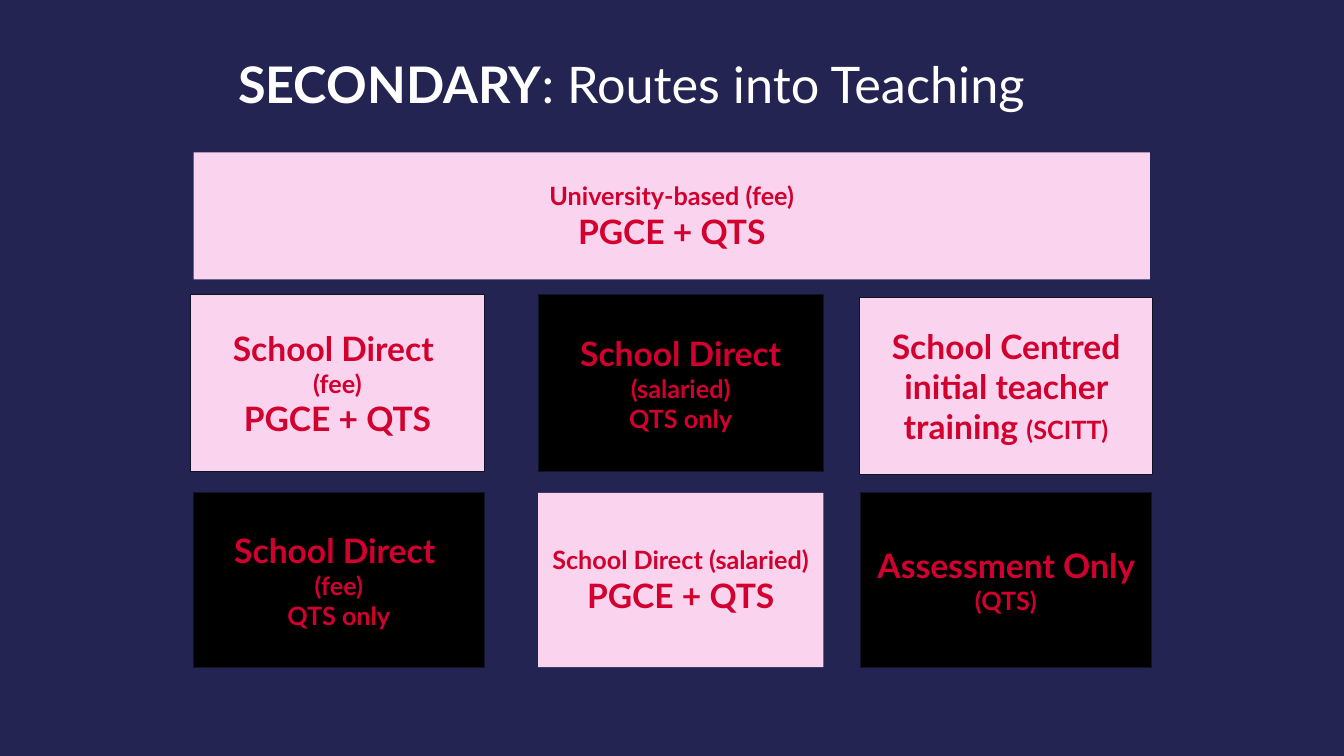
from pptx import Presentation
from pptx.dml.color import RGBColor
from pptx.enum.shapes import MSO_SHAPE
from pptx.enum.text import MSO_ANCHOR, PP_ALIGN
from pptx.util import Cm, Pt

COLORS = {"navy": "242452", "pink": "FAD4EE", "black": "000000",
          "edge": "111127", "red": "D2002E", "white": "FFFFFF"}
FONT = "Lato"
BIG, SMALL = 24, 18

TITLE = [("SECONDARY", True), (": Routes into Teaching", False)]
LEFT, MID, RIGHT = 4.88, 13.56, 21.69
TOP, UPPER, LOWER = 3.84, 7.42, 12.42

ROUTES = [
    ((LEFT, TOP, 24.1, 3.2), "pink", False,
     [[("University-based (fee)", SMALL)], [("PGCE + QTS", BIG)]]),
    ((LEFT - 0.07, UPPER, 7.39, 4.47), "pink", True,
     [[("School Direct ", BIG)], [("(fee)", SMALL)], [("PGCE + QTS", BIG)]]),
    ((MID, UPPER, 7.19, 4.47), "black", True,
     [[("School Direct ", BIG), ("(salaried)", SMALL)], [("QTS only", SMALL)]]),
    ((RIGHT - 0.03, UPPER + 0.07, 7.39, 4.47), "pink", True,
     [[("School Centred initial teacher training ", BIG), ("(SCITT)", SMALL)]]),
    ((LEFT, LOWER, 7.32, 4.39), "black", True,
     [[("School Direct ", BIG)], [("(fee)", SMALL)], [("QTS only", SMALL)]]),
    ((MID, LOWER, 7.19, 4.39), "pink", False,
     [[("School Direct (salaried)", SMALL)], [("PGCE + QTS", BIG)]]),
    ((RIGHT, LOWER, 7.32, 4.39), "black", True,
     [[("Assessment Only ", BIG), ("(QTS)", SMALL)]]),
]


def color(name):
    return RGBColor.from_string(COLORS[name])


def add_run(para, text, size, tint, bold=True):
    run = para.add_run()
    run.text = text
    font = run.font
    font.name, font.size, font.bold = FONT, Pt(size), bold
    font.color.rgb = color(tint)


def add_title(slide):
    title = slide.shapes.title
    title.left, title.top, title.width, title.height = (
        Cm(v) for v in (6, 1.35, 22.33, 2.3))
    frame = title.text_frame
    frame.margin_left = frame.margin_right = 0
    frame.margin_top = frame.margin_bottom = 0
    frame.vertical_anchor = MSO_ANCHOR.TOP
    para = frame.paragraphs[0]
    para.alignment = PP_ALIGN.LEFT
    for text, bold in TITLE:
        add_run(para, text, 36, "white", bold)


def add_route(slide, place, fill, edged, lines):
    box = slide.shapes.add_shape(MSO_SHAPE.RECTANGLE, *(Cm(v) for v in place))
    box.shadow.inherit = False
    box.fill.solid()
    box.fill.fore_color.rgb = color(fill)
    if edged:
        box.line.color.rgb = color("edge")
        box.line.width = Pt(0.75)
    else:
        box.line.fill.background()
    frame = box.text_frame
    frame.word_wrap = True
    frame.vertical_anchor = MSO_ANCHOR.MIDDLE
    for i, line in enumerate(lines):
        para = frame.add_paragraph() if i else frame.paragraphs[0]
        para.alignment = PP_ALIGN.CENTER
        for text, size in line:
            add_run(para, text, size, "red")


def main():
    deck = Presentation()
    deck.slide_width, deck.slide_height = Cm(33.87), Cm(19.05)
    slide = deck.slides.add_slide(deck.slide_layouts[5])
    slide.background.fill.solid()
    slide.background.fill.fore_color.rgb = color("navy")
    add_title(slide)
    for route in ROUTES:
        add_route(slide, *route)
    deck.save("out.pptx")


if __name__ == "__main__":
    main()
